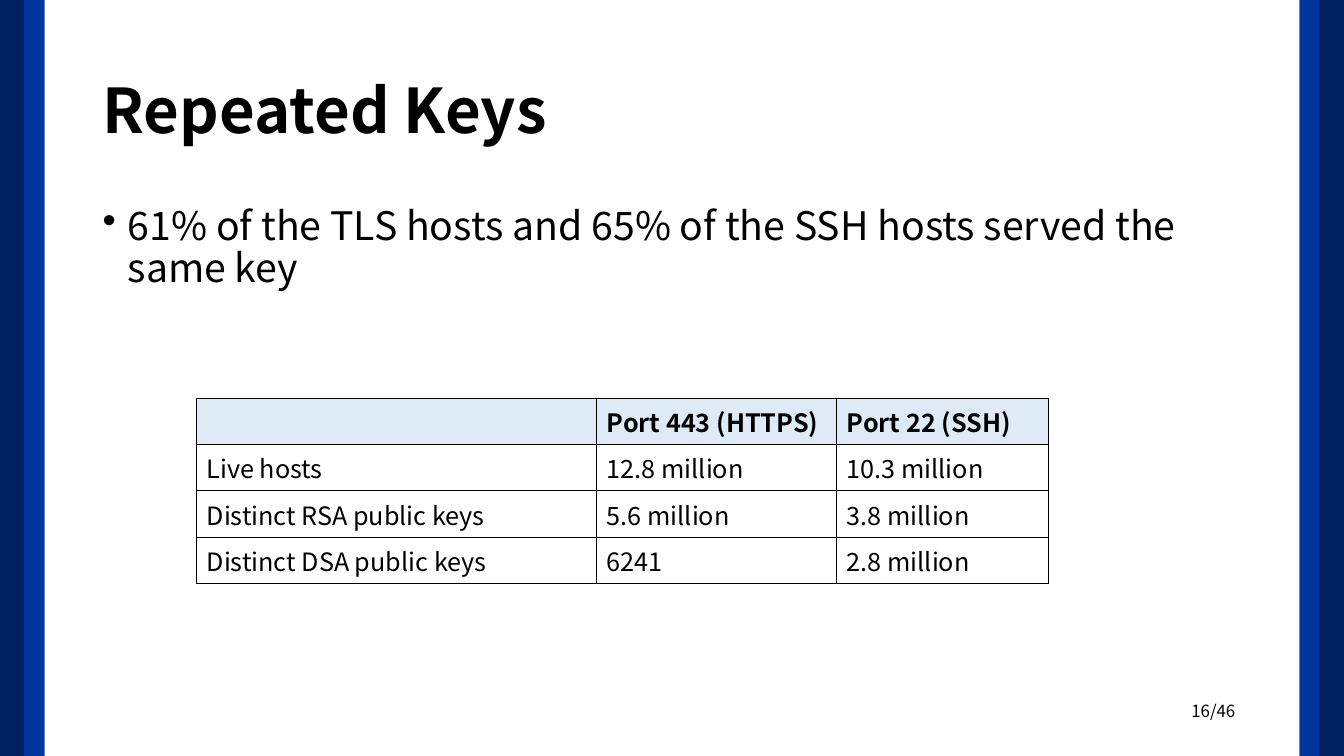
from lxml import etree
from pptx import Presentation
from pptx.dml.color import RGBColor
from pptx.enum import shapes, text
from pptx.oxml.ns import qn
from pptx.util import Inches, Pt

FONT = "Noto Sans CJK KR"


def rgb(color):
    return RGBColor.from_string(color)


def write(tf, words, size, bold=False):
    p = tf.paragraphs[0]
    p.text = words
    p.font.name = FONT
    p.font.size = Pt(size)
    p.font.bold = bold
    p.font.color.rgb = rgb("000000")
    return p


prs = Presentation()
prs.slide_width, prs.slide_height = Inches(13.33), Inches(7.5)
s = prs.slides.add_slide(prs.slide_layouts[6])

# Side bars, the bright ones over the dark ones
bars = [(0, 0.44, "002060"), (12.89, 0.44, "002060"),
        (0.24, 0.2, "00359E"), (12.89, 0.2, "00359E")]
for left, width, color in bars:
    sp = s.shapes.add_shape(shapes.MSO_SHAPE.RECTANGLE, Inches(left), 0,
                            Inches(width), prs.slide_height)
    sp.shadow.inherit = False
    sp.fill.solid()
    sp.fill.fore_color.rgb = rgb(color)
    sp.line.fill.background()

# Title, body and page number
boxes = [(0.92, 0.4, 11.5, 1.45, "Repeated Keys", 44),
         (0.92, 2, 11.5, 4.76, "61% of the TLS hosts and 65% of the SSH hosts "
          "served the same key", 28),
         (9.4, 6.9, 2.95, 0.3, "16/46", 12)]
paragraphs = []
for left, top, width, height, words, size in boxes:
    tf = s.shapes.add_textbox(Inches(left), Inches(top),
                              Inches(width), Inches(height)).text_frame
    tf.word_wrap = True
    paragraphs.append(write(tf, words, size, bold=size == 44))
    if size == 44:
        tf.vertical_anchor = text.MSO_ANCHOR.MIDDLE

title, body, page = paragraphs
title.line_spacing = body.line_spacing = 0.9
body.space_before = Pt(10)
page.alignment = text.PP_ALIGN.RIGHT

# Bullet with a hanging indent; it goes before the default run properties
pPr = body._p.get_or_add_pPr()
pPr.set("marL", str(Inches(0.25)))
pPr.set("indent", str(Inches(-0.25)))
bullet = etree.Element(qn("a:buChar"), char="•")
pPr.find(qn("a:defRPr")).addprevious(bullet)

# Table of key counts
rows = [["", "Port 443 (HTTPS)", "Port 22 (SSH)"],
        ["Live hosts", "12.8 million", "10.3 million"],
        ["Distinct RSA public keys", "5.6 million", "3.8 million"],
        ["Distinct DSA public keys", "6241", "2.8 million"]]
widths = [3.97, 2.38, 2.1]
row_height = 0.46
table = s.shapes.add_table(len(rows), len(widths), Inches(1.95), Inches(3.95),
                           Inches(sum(widths)), Inches(row_height * len(rows))).table
for column, width in zip(table.columns, widths):
    column.width = Inches(width)

for i, row in enumerate(rows):
    table.rows[i].height = Inches(row_height)
    for j, words in enumerate(row):
        cell = table.cell(i, j)
        write(cell.text_frame, words, 18, bold=i == 0)
        # Borders come before the fill in the cell properties
        tcPr = cell._tc.get_or_add_tcPr()
        for side in ("a:lnL", "a:lnR", "a:lnT", "a:lnB"):
            ln = etree.SubElement(tcPr, qn(side), w=str(Pt(1)))
            line_fill = etree.SubElement(ln, qn("a:solidFill"))
            etree.SubElement(line_fill, qn("a:srgbClr"), val="000000")
        if i == 0:
            cell.fill.solid()
            cell.fill.fore_color.rgb = rgb("DEEBF7")
        else:
            cell.fill.background()

prs.save("out.pptx")
